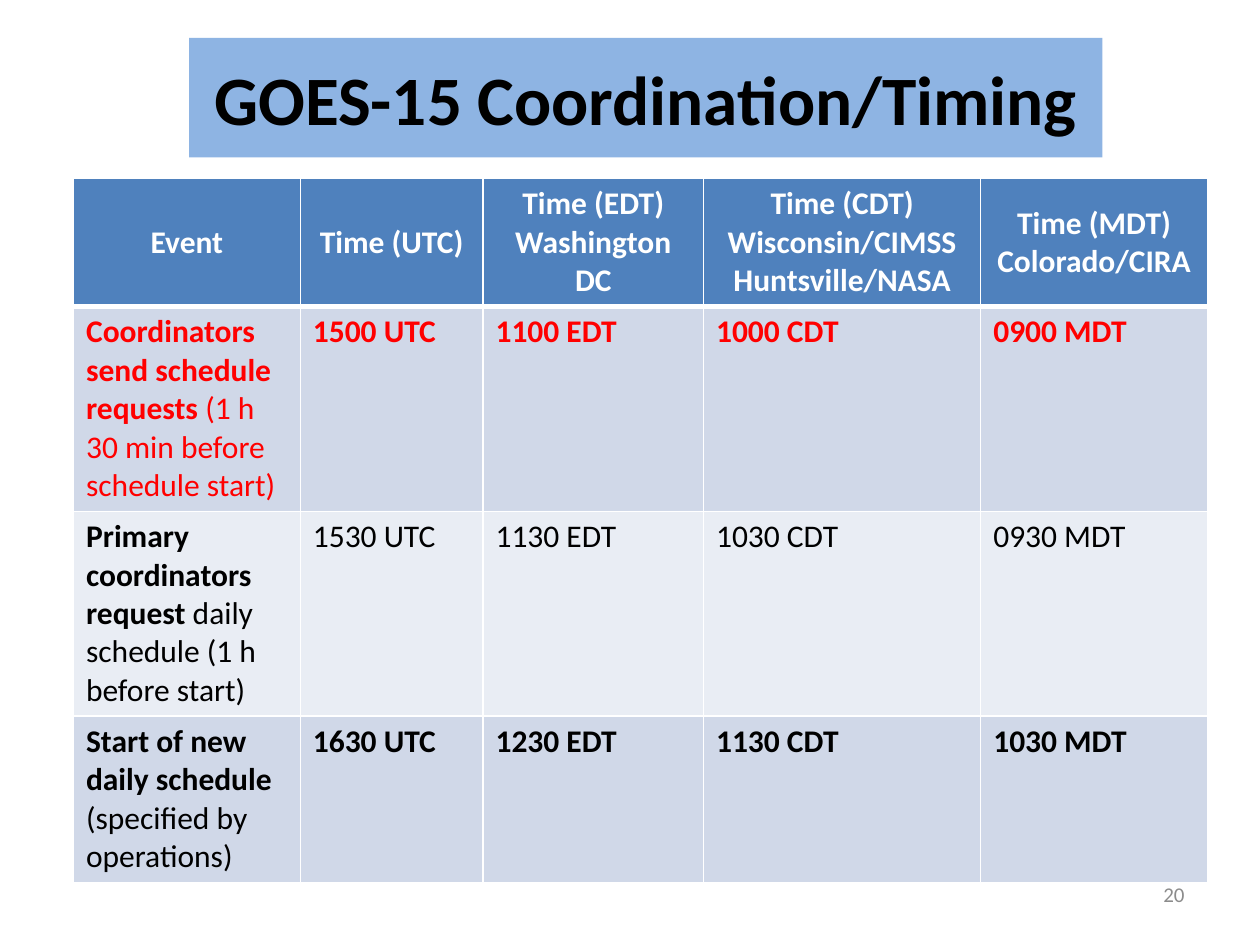
from dataclasses import dataclass

from lxml import etree
from pptx import Presentation
from pptx import util as u
from pptx.dml.color import RGBColor
from pptx.enum import shapes, text
from pptx.oxml.ns import qn


@dataclass(frozen=True)
class Theme:
    """Colours, font and type sizes of the slide."""
    font: str = "Calibri"
    banner: str = "8EB4E3"
    header: str = "4F81BD"
    bands: tuple = ("D0D8E8", "E9EDF4")
    white: str = "FFFFFF"
    black: str = "000000"
    red: str = "FF0000"
    grey: str = "8C8C8C"
    title_size: float = 39.6
    table_size: float = 18
    number_size: float = 12


THEME = Theme()
COLUMN_WIDTHS = (129.6, 104.4, 126, 158.4, 129.6)
ROW_HEIGHTS = (73, 117, 117, 95)
HEADINGS = (
    "Event",
    "Time (UTC)",
    "Time (EDT) Washington DC",
    "Time (CDT) Wisconsin/CIMSS Huntsville/NASA",
    "Time (MDT) Colorado/CIRA",
)
EVENTS = (
    ("Coordinators send schedule requests ", "(1 h 30 min before schedule start)",
     ("1500 UTC", "1100 EDT", "1000 CDT", "0900 MDT"), THEME.red, True),
    ("Primary coordinators request", " daily schedule (1 h before start)",
     ("1530 UTC", "1130 EDT", "1030 CDT", "0930 MDT"), THEME.black, False),
    ("Start of new daily schedule ", "(specified by operations)",
     ("1630 UTC", "1230 EDT", "1130 CDT", "1030 MDT"), THEME.black, True),
)


def points(*values):
    """Convert numbers to lengths in points."""
    return [u.Pt(value) for value in values]


def write(frame, spans, size, colour, align):
    """Write one paragraph from (wording, bold) spans."""
    frame.word_wrap = True
    para = frame.paragraphs[0]
    para.alignment = align
    for wording, bold in spans:
        span = para.add_run()
        span.text = wording
        span.font.name = THEME.font
        span.font.size = u.Pt(size)
        span.font.bold = bold
        span.font.color.rgb = RGBColor.from_string(colour)


def add_title(page, wording):
    """Add the filled title banner."""
    box = page.shapes.add_shape(shapes.MSO_SHAPE.RECTANGLE, *points(108, 21.6, 522, 68.4))
    box.shadow.inherit = False
    box.fill.solid()
    box.fill.fore_color.rgb = RGBColor.from_string(THEME.banner)
    box.line.fill.background()
    box.text_frame.vertical_anchor = text.MSO_ANCHOR.MIDDLE
    write(box.text_frame, [(wording, True)], THEME.title_size, THEME.black,
          text.PP_ALIGN.CENTER)


def set_borders(cell, top, bottom):
    """Draw white borders round a cell, with given top and bottom widths."""
    properties = cell._tc.get_or_add_tcPr()
    widths = {"a:lnL": 1, "a:lnR": 1, "a:lnT": top, "a:lnB": bottom}
    for index, (tag, width) in enumerate(widths.items()):
        line = etree.Element(qn(tag), w=str(u.Pt(width)))
        fill = etree.SubElement(line, qn("a:solidFill"))
        etree.SubElement(fill, qn("a:srgbClr"), val=THEME.white)
        properties.insert(index, line)


def fill_cell(cell, spans, fill, colour, align, top=1, bottom=1):
    """Give a cell its fill, borders and wording."""
    cell.fill.solid()
    cell.fill.fore_color.rgb = RGBColor.from_string(fill)
    set_borders(cell, top, bottom)
    write(cell.text_frame, spans, THEME.table_size, colour, align)


def add_schedule(page):
    """Add the table of events and local times."""
    frame = page.shapes.add_table(
        len(ROW_HEIGHTS), len(COLUMN_WIDTHS),
        *points(42, 102, sum(COLUMN_WIDTHS), sum(ROW_HEIGHTS)))
    table = frame.table
    table.first_row = table.horz_banding = False
    for column, width in zip(table.columns, COLUMN_WIDTHS):
        column.width = u.Pt(width)
    for row, height in zip(table.rows, ROW_HEIGHTS):
        row.height = u.Pt(height)

    for cell, heading in zip(table.rows[0].cells, HEADINGS):
        fill_cell(cell, [(heading, True)], THEME.header, THEME.white,
                  text.PP_ALIGN.CENTER, bottom=3)
        cell.vertical_anchor = text.MSO_ANCHOR.MIDDLE

    for index, (event, detail, times, colour, bold) in enumerate(EVENTS):
        contents = [[(event, True), (detail, False)]] + [[(time, bold)] for time in times]
        for cell, spans in zip(table.rows[index + 1].cells, contents):
            fill_cell(cell, spans, THEME.bands[index % 2], colour,
                      text.PP_ALIGN.LEFT, top=1 if index else 3)


def add_page_number(page, number):
    """Add the page number at the lower right."""
    box = page.shapes.add_textbox(*points(516, 492, 168, 37.4))
    box.text_frame.vertical_anchor = text.MSO_ANCHOR.MIDDLE
    write(box.text_frame, [(number, False)], THEME.number_size, THEME.grey,
          text.PP_ALIGN.RIGHT)


def main():
    """Build and save the deck."""
    deck = Presentation()
    deck.slide_width, deck.slide_height = points(720, 540)
    page = deck.slides.add_slide(deck.slide_layouts[6])
    add_title(page, "GOES-15 Coordination/Timing")
    add_schedule(page)
    add_page_number(page, "20")
    deck.save("out.pptx")


if __name__ == "__main__":
    main()
